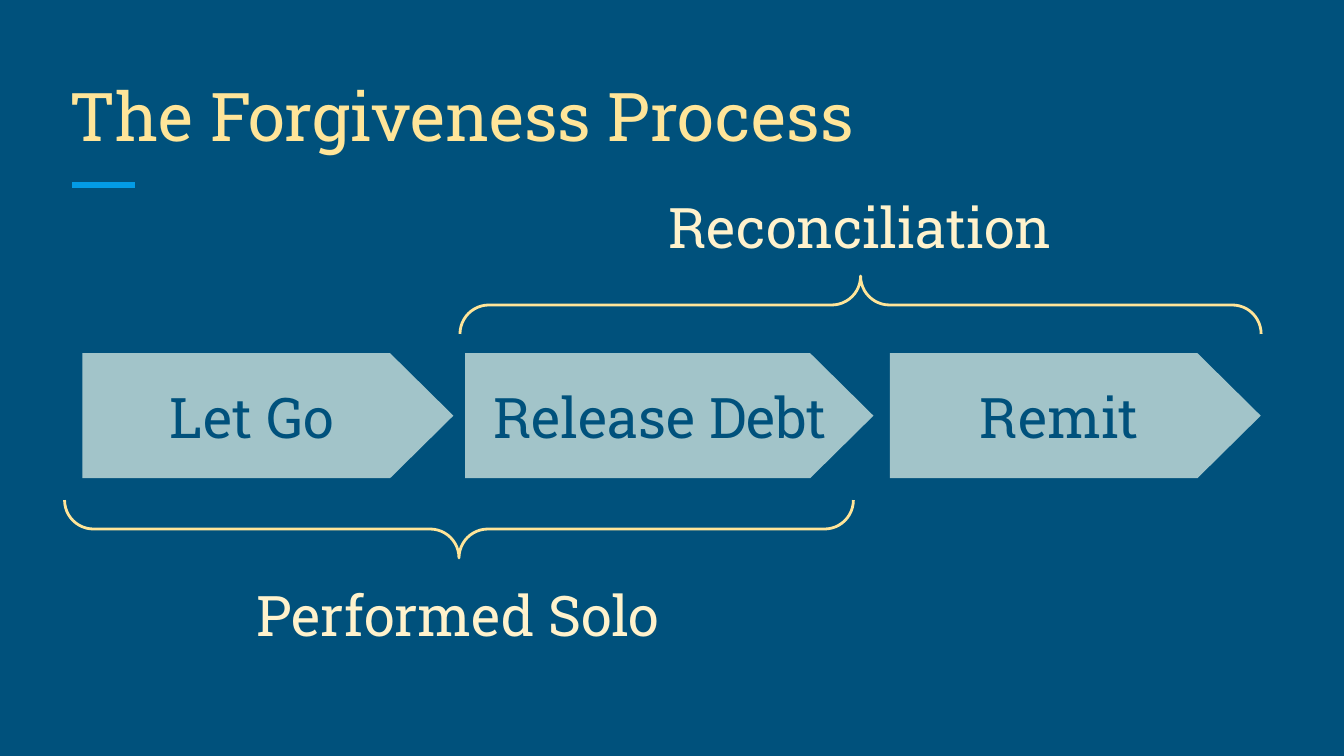
from pptx import Presentation
from pptx.dml.color import RGBColor
from pptx.enum.shapes import MSO_CONNECTOR, MSO_SHAPE
from pptx.enum.text import MSO_ANCHOR, MSO_AUTO_SIZE, PP_ALIGN
from pptx.util import Pt
from lxml import etree

STRAIGHT = MSO_CONNECTOR.STRAIGHT
PENTAGON, BRACE = MSO_SHAPE.PENTAGON, MSO_SHAPE.LEFT_BRACE
MIDDLE, BOTTOM = MSO_ANCHOR.MIDDLE, MSO_ANCHOR.BOTTOM
LEFT, CENTER = PP_ALIGN.LEFT, PP_ALIGN.CENTER
NO_FIT = MSO_AUTO_SIZE.NONE
A = "http://schemas.openxmlformats.org/drawingml/2006/main"
NAVY, GOLD, CREAM, TEAL, BLUE = "00517C", "FFE599", "FFF2CC", "A2C4C9", "039BE5"


def rgb(value):
    return RGBColor.from_string(value)


def write(shape, text, size, color, align, anchor):
    tf = shape.text_frame
    tf.word_wrap = True
    tf.auto_size = NO_FIT
    tf.vertical_anchor = anchor
    tf.margin_left = tf.margin_right = tf.margin_top = tf.margin_bottom = Pt(7.2)
    p = tf.paragraphs[0]
    p.alignment = align
    r = p.add_run()
    r.text = text
    r.font.name = "Roboto Slab"
    r.font.size = Pt(size)
    r.font.color.rgb = rgb(color)


prs = Presentation()
prs.slide_width, prs.slide_height = Pt(720), Pt(405)
s = prs.slides.add_slide(prs.slide_layouts[5])
s.background.fill.solid()
s.background.fill.fore_color.rgb = rgb(NAVY)

accent = s.shapes.add_connector(STRAIGHT, Pt(38.6), Pt(99), Pt(72.3), Pt(99))
accent.line.color.rgb = rgb(BLUE)
accent.line.width = Pt(3)
etree.SubElement(accent._element.spPr, f"{{{A}}}effectLst")

title = s.shapes.title
title.left, title.top, title.width, title.height = Pt(30.2), Pt(36), Pt(659), Pt(54)
write(title, "The Forgiveness Process", 36, GOLD, LEFT, BOTTOM)

steps = s.shapes.add_group_shape()
for text, left, width in [
    ("Let Go", 44.2, 198.7),
    (" Release Debt", 249.1, 218.8),
    ("Remit", 476.7, 198.7),
]:
    step = steps.shapes.add_shape(PENTAGON, Pt(left), Pt(189.2), Pt(width), Pt(67))
    step.shadow.inherit = False
    step.adjustments[0] = 0.506
    step.fill.solid()
    step.fill.fore_color.rgb = rgb(TEAL)
    step.line.fill.background()
    write(step, text, 30, NAVY, CENTER, MIDDLE)

depth = 31
for center_x, center_y, span, rotation in [
    (245.9, 283.4, 422.6, 270),
    (461, 163.4, 429.2, 90),
]:
    brace = s.shapes.add_shape(
        BRACE, Pt(center_x - depth / 2), Pt(center_y - span / 2), Pt(depth), Pt(span)
    )
    brace.rotation = rotation
    brace.adjustments[0] = brace.adjustments[1] = 0.5
    brace.shadow.inherit = False
    brace.fill.background()
    brace.line.color.rgb = rgb(GOLD)
    brace.line.width = Pt(1.5)

for text, left, top, width in [
    ("Performed Solo", 127.4, 300.2, 236.2),
    ("Reconciliation", 310.3, 92.2, 301),
]:
    label = s.shapes.add_textbox(Pt(left), Pt(top), Pt(width), Pt(54))
    write(label, text, 30, CREAM, CENTER, BOTTOM)

prs.save("out.pptx")
